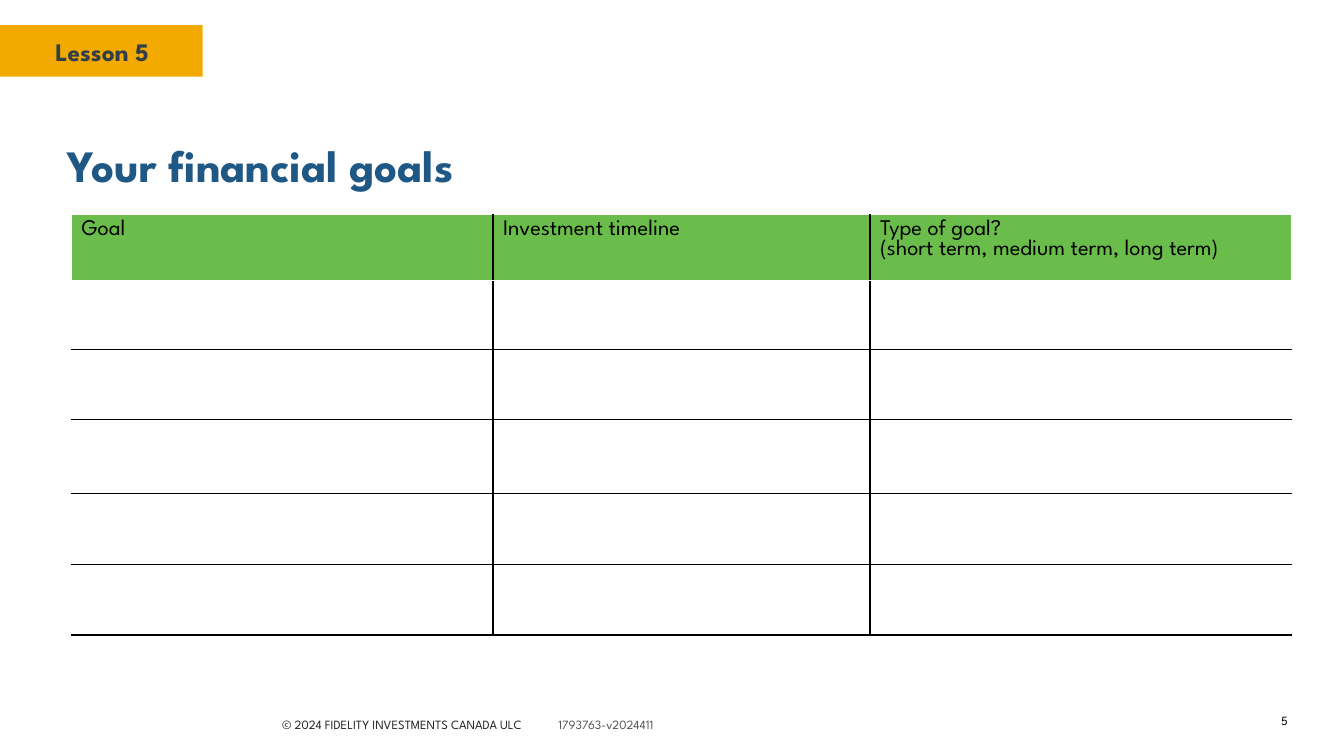
import pptx
import pptx.util
import pptx.dml.color
import pptx.enum.shapes
import pptx.enum.text
from lxml import etree
from pptx.util import Inches, Pt

TITLE = "Your financial goals"
LESSON = "Lesson 5"
COPYRIGHT = ("© 2024 FIDELITY INVESTMENTS CANADA ULC", "1793763-v2024411")
PAGE = "5"
HEADERS = [
    "Goal",
    "Investment timeline",
    "Type of goal?\u00a0\n(short term, medium term, long term)",
]
COL_WIDTHS = [4.18, 3.74, 4.18]
ROW_HEIGHTS = [0.65, 0.69, 0.69, 0.74, 0.7, 0.7]

FONT = "League Spartan"
COLORS = {
    "tab": "F2A900", "lesson": "333F48", "title": "205885",
    "header": "6ABD4A", "black": "000000", "white": "FFFFFF",
    "copyright": "222222", "version": "545454",
}
NS = "http://schemas.openxmlformats.org/drawingml/2006/main"
ANCHOR = pptx.enum.text.MSO_ANCHOR
ALIGN = pptx.enum.text.PP_ALIGN


def rgb(name):
    return pptx.dml.color.RGBColor.from_string(COLORS[name])


def style(r, size, color, bold=False):
    r.font.name = FONT
    r.font.size = Pt(size)
    r.font.bold = bold
    r.font.color.rgb = rgb(color)


def add_text(s, box, text, size, color, bold=False, align=ALIGN.LEFT):
    tf = s.shapes.add_textbox(*map(Inches, box)).text_frame
    tf.word_wrap = True
    tf.vertical_anchor = ANCHOR.MIDDLE
    p = tf.paragraphs[0]
    p.text = text
    p.alignment = align
    style(p.runs[0], size, color, bold)
    return p


def add_border(cell, side, color):
    ln = etree.SubElement(cell._tc.get_or_add_tcPr(), f"{{{NS}}}ln{side}", w=str(Pt(1)))
    fill = etree.SubElement(ln, f"{{{NS}}}solidFill")
    etree.SubElement(fill, f"{{{NS}}}srgbClr", val=COLORS[color])


prs = pptx.Presentation()
prs.slide_width, prs.slide_height = Inches(13.33), Inches(7.5)
s = prs.slides.add_slide(prs.slide_layouts[5])

# Title
title = s.shapes.title
title.left, title.top, title.width, title.height = map(Inches, (0.57, 1.27, 12.2, 0.73))
tf = title.text_frame
tf.text = TITLE
tf.vertical_anchor = ANCHOR.MIDDLE
tf.paragraphs[0].alignment = ALIGN.LEFT
style(tf.paragraphs[0].runs[0], 32, "title", True)

# Lesson tab
tab = s.shapes.add_shape(pptx.enum.shapes.MSO_SHAPE.RECTANGLE,
                         *map(Inches, (0, 0.25, 2.01, 0.51)))
tab.shadow.inherit = False
tab.fill.solid()
tab.fill.fore_color.rgb = rgb("tab")
tab.line.fill.background()
add_text(s, (0.45, 0.31, 1.31, 0.4), LESSON, 18, "lesson", True)

# Footer: the version number sits at a tab stop
p = add_text(s, (2.7, 7.06, 4.3, 0.25), COPYRIGHT[0], 9, "copyright")
stops = etree.SubElement(p._p.get_or_add_pPr(), f"{{{NS}}}tabLst")
etree.SubElement(stops, f"{{{NS}}}tab", pos=str(Inches(2.74)), algn="l")
r = p.add_run()
r.text = "\t" + COPYRIGHT[1]
style(r, 9, "version")
add_text(s, (12.17, 7.06, 0.7, 0.18), PAGE, 9, "black", align=ALIGN.RIGHT)

# Goals table
n_rows, n_cols = len(ROW_HEIGHTS), len(COL_WIDTHS)
table = s.shapes.add_table(n_rows, n_cols, Inches(0.71), Inches(2.13),
                           Inches(sum(COL_WIDTHS)), Inches(sum(ROW_HEIGHTS))).table
table.first_row = table.horz_banding = False
for col, width in zip(table.columns, COL_WIDTHS):
    col.width = Inches(width)
for row, height in zip(table.rows, ROW_HEIGHTS):
    row.height = Inches(height)

for i in range(n_rows):
    for j in range(n_cols):
        cell = table.cell(i, j)
        # White outer sides and header edges, black rules elsewhere
        add_border(cell, "L", "black" if j > 0 else "white")
        add_border(cell, "R", "black" if j < n_cols - 1 else "white")
        add_border(cell, "T", "black" if i > 1 else "white")
        add_border(cell, "B", "black" if i > 0 else "white")
        if i == 0:
            cell.fill.solid()
            cell.fill.fore_color.rgb = rgb("header")
            cell.text_frame.text = HEADERS[j]
            for p in cell.text_frame.paragraphs:
                style(p.runs[0], 16, "black")
        else:
            cell.fill.background()

prs.save("out.pptx")
